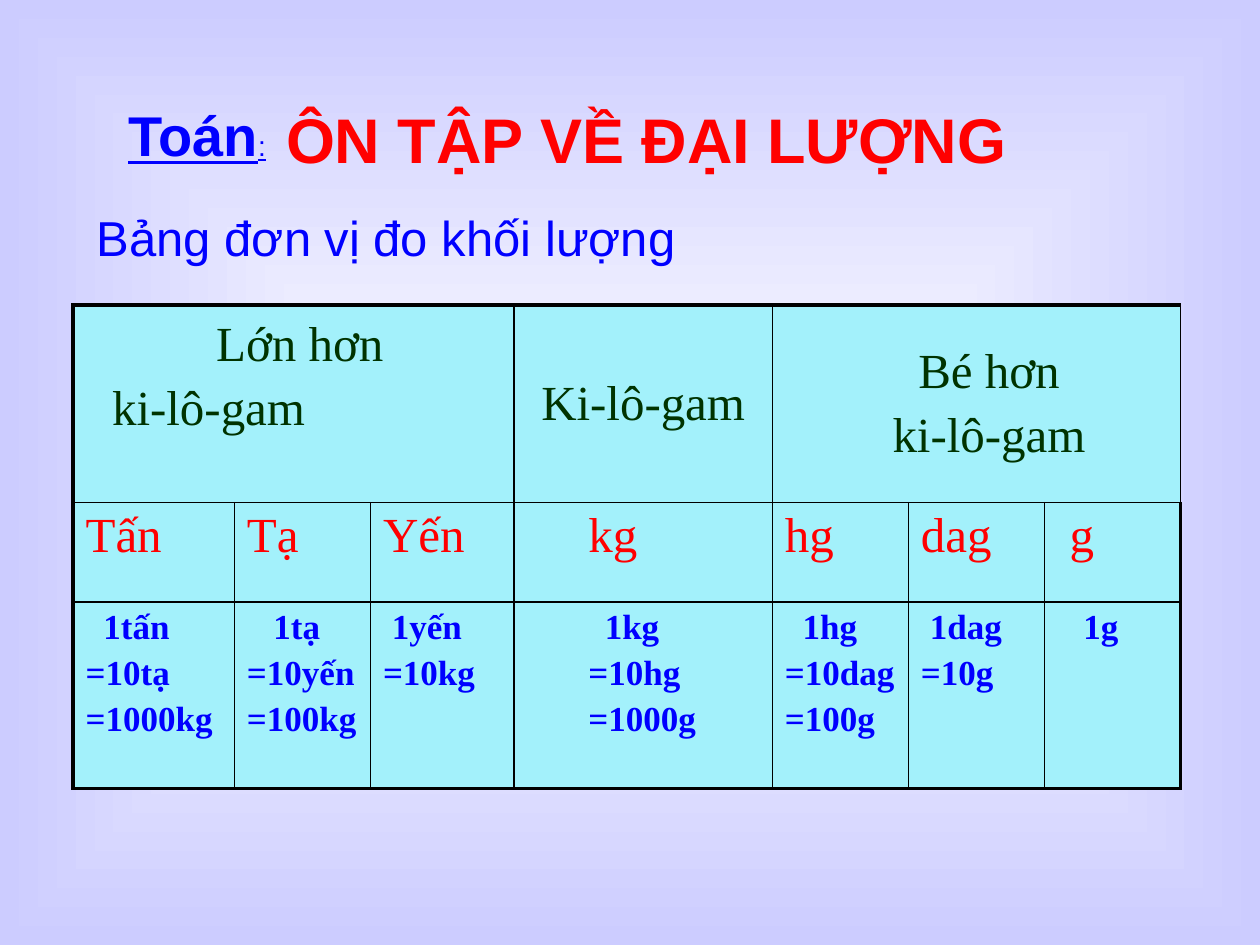
import pptx
import pptx.util
import pptx.dml.color
import pptx.enum.text
import pptx.oxml.ns
from dataclasses import dataclass
from lxml import etree

Inch, Pt = pptx.util.Inches, pptx.util.Pt
Align = pptx.enum.text.PP_ALIGN
Anchor = pptx.enum.text.MSO_ANCHOR
Fit = pptx.enum.text.MSO_AUTO_SIZE
qn = pptx.oxml.ns.qn


@dataclass(frozen=True)
class Theme:
    sans: str = "Arial"
    serif: str = "Times New Roman"
    blue: str = "0000FF"
    red: str = "FF0000"
    green: str = "003300"
    cyan: str = "A3F1FB"
    white: str = "FFFFFF"
    edge: str = "CCCCFF"
    black: str = "000000"
    title: int = 36
    label: int = 32
    big: int = 28
    small: int = 20
    tiny: int = 16
    thick: float = 2.25
    thin: float = 1


T = Theme()

# Content: each line of a cell is (text, left indent in inches)
TITLE = "ÔN TẬP VỀ ĐẠI LƯỢNG"
LABEL = ("Toán", ":")
LEAD = "Bảng đơn vị đo khối lượng"
HEADS = [  # first column, last column, bottom margin, lines with alignment
    (0, 2, 0.48, [("Lớn hơn", 0.1, Align.CENTER), ("ki-lô-gam", 0.21, Align.LEFT)]),
    (3, 3, 0.05, [("Ki-lô-gam", 0, Align.CENTER)]),
    (4, 6, 0.05, [("Bé hơn", 0.2, Align.CENTER), ("ki-lô-gam", 0.2, Align.CENTER)]),
]
UNITS = [("Tấn", 0), ("Tạ", 0), ("Yến", 0), ("kg", 0.49),
         ("hg", 0), ("dag", 0), ("g", 0.1)]
RULES = [
    [("1tấn", 0.14), ("=10tạ", 0), ("=1000kg", 0)],
    [("1tạ", 0.21), ("=10yến", 0), ("=100kg", 0)],
    [("1yến", 0.07), ("=10kg", 0)],
    [("1kg", 0.62), ("=10hg", 0.49), ("=1000g", 0.49)],
    [("1hg", 0.14), ("=10dag", 0), ("=100g", 0)],
    [("1dag", 0.07), ("=10g", 0)],
    [("1g", 0.21)],
]
COLS = [1.28, 1.08, 1.14, 2.05, 1.08, 1.08, 1.08]
ROWS = [1.57, 0.79, 1.48]


def rgb(hue):
    return pptx.dml.color.RGBColor.from_string(hue)


def style(run, face, size, hue, bold=False, under=False):
    font = run.font
    font.name, font.size, font.bold = face, Pt(size), bold
    font.underline = under
    font.color.rgb = rgb(hue)


def place(shape, left, top, wide, high):
    shape.left, shape.top = Inch(left), Inch(top)
    shape.width, shape.height = Inch(wide), Inch(high)
    frame = shape.text_frame
    frame.word_wrap, frame.auto_size = False, Fit.SHAPE_TO_FIT_TEXT
    frame.vertical_anchor = Anchor.TOP
    frame.paragraphs[0].alignment = Align.LEFT
    return frame.paragraphs[0]


def border(cell, row, col):
    outer = {"L": col == 0, "R": col == len(COLS) - 1,
             "T": row == 0, "B": row == len(ROWS) - 1}
    props = cell._tc.get_or_add_tcPr()
    for side, edge in outer.items():
        line = etree.SubElement(props, qn("a:ln" + side),
                                w=str(Pt(T.thick if edge else T.thin)))
        fill = etree.SubElement(line, qn("a:solidFill"))
        etree.SubElement(fill, qn("a:srgbClr"), val=T.black)


def write(cell, lines, size, hue, bold=False):
    frame = cell.text_frame
    frame.text = "\n".join(line[0] for line in lines)
    for para, (_, indent, *align) in zip(frame.paragraphs, lines):
        para.alignment = align[0] if align else Align.LEFT
        props = para._p.get_or_add_pPr()
        props.set("marL", str(Inch(indent)))
        gap = etree.SubElement(props, qn("a:spcBef"))
        etree.SubElement(gap, qn("a:spcPct"), val="20000")
        style(para.runs[0], T.serif, size, hue, bold)


def backdrop(slide):
    fill = slide.background.fill
    fill.gradient()
    for stop, hue in zip(fill.gradient_stops, (T.white, T.edge)):
        stop.color.rgb = rgb(hue)
    grad = slide._element.find(".//" + qn("a:gradFill"))
    grad.remove(grad.find(qn("a:lin")))
    shade = etree.SubElement(grad, qn("a:path"))
    shade.set("path", "shape")
    etree.SubElement(shade, qn("a:fillToRect"),
                     {side: "50000" for side in "ltrb"})


def units(slide):
    table = slide.shapes.add_table(
        len(ROWS), len(COLS), Inch(0.58), Inch(2.42),
        Inch(sum(COLS)), Inch(sum(ROWS))).table
    table.first_row = table.horz_banding = False
    for part, wide in zip(table.columns, COLS):
        part.width = Inch(wide)
    for part, high in zip(table.rows, ROWS):
        part.height = Inch(high)

    # Borders and fill
    for row in range(len(ROWS)):
        for col in range(len(COLS)):
            cell = table.cell(row, col)
            border(cell, row, col)
            cell.fill.solid()
            cell.fill.fore_color.rgb = rgb(T.cyan)

    # Group heads
    for first, last, foot, lines in HEADS:
        cell = table.cell(0, first)
        if last > first:
            cell.merge(table.cell(0, last))
        cell.vertical_anchor = Anchor.MIDDLE
        cell.margin_bottom = Inch(foot)
        write(cell, lines, T.big, T.green)

    # Units and their conversions
    for col, (unit, lines) in enumerate(zip(UNITS, RULES)):
        write(table.cell(1, col), [unit], T.big, T.red)
        write(table.cell(2, col), lines, T.small, T.blue, True)


def main():
    deck = pptx.Presentation()
    deck.slide_width, deck.slide_height = Inch(10), Inch(7.5)
    slide = deck.slides.add_slide(deck.slide_layouts[5])
    backdrop(slide)

    # Title line
    title = slide.shapes.title
    title.text_frame.text = TITLE
    para = place(title, 2.17, 0.75, 5.93, 0.7)
    style(para.runs[0], T.sans, T.title, T.red, True)

    label = slide.shapes.add_textbox(0, 0, 0, 0)
    para = place(label, 0.92, 0.75, 1.3, 0.64)
    for text, size, bold in zip(LABEL, (T.label, T.tiny), (True, False)):
        run = para.add_run()
        run.text = text
        style(run, T.sans, size, T.blue, bold, True)

    units(slide)

    # Table caption
    lead = slide.shapes.add_textbox(0, 0, 0, 0)
    lead.text_frame.text = LEAD
    para = place(lead, 0.67, 1.6, 4.85, 0.57)
    style(para.runs[0], T.sans, T.big, T.blue)

    deck.save("out.pptx")


if __name__ == "__main__":
    main()
